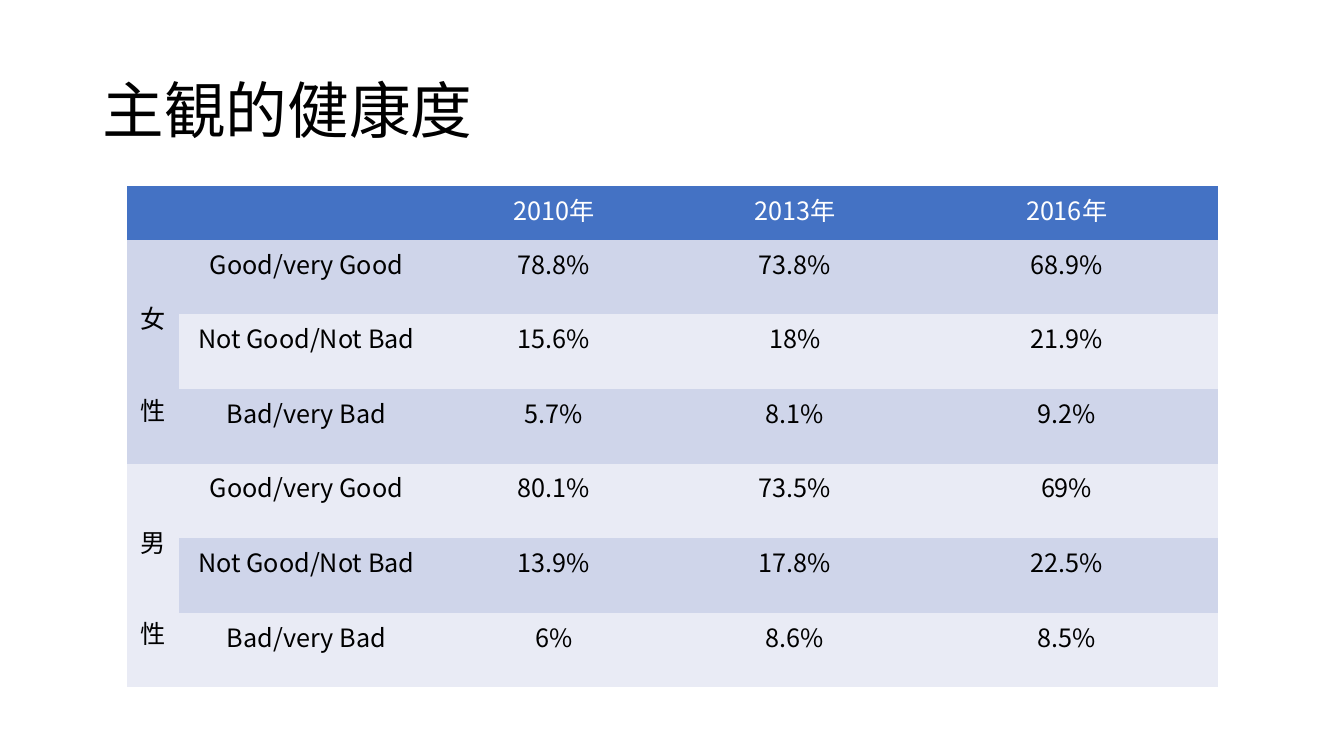
from lxml import etree
from pptx import Presentation
from pptx.dml.color import RGBColor
from pptx.enum.text import MSO_ANCHOR, PP_ALIGN
from pptx.oxml.ns import qn
from pptx.util import Inches, Pt

TITLE = "主観的健康度"
YEARS = ["2010年", "2013年", "2016年"]
GROUPS = [
    ("女性", [
        ("Good/very Good", "78.8%", "73.8%", "68.9%"),
        ("Not Good/Not Bad", "15.6%", "18%", "21.9%"),
        ("Bad/very Bad", "5.7%", "8.1%", "9.2%"),
    ]),
    ("男性", [
        ("Good/very Good", "80.1%", "73.5%", "69%"),
        ("Not Good/Not Bad", "13.9%", "17.8%", "22.5%"),
        ("Bad/very Bad", "6%", "8.6%", "8.5%"),
    ]),
]
COL_WIDTHS = [0.52, 2.52, 2.39, 2.39, 3]
HEADER_H, ROW_H = 0.53, 0.74

FONT = "Noto Sans CJK JP"
NO_STYLE = "{2D5ABB26-0587-4C30-8999-92F81FD0307C}"
BLACK = RGBColor(0x00, 0x00, 0x00)
WHITE = RGBColor(0xFF, 0xFF, 0xFF)
HEADER = RGBColor(0x44, 0x72, 0xC4)
BANDS = [RGBColor(0xCF, 0xD5, 0xEA), RGBColor(0xE9, 0xEB, 0xF5)]
LEFT, CENTER = PP_ALIGN.LEFT, PP_ALIGN.CENTER
MIDDLE = MSO_ANCHOR.MIDDLE


def write(tf, text, size=18, color=BLACK, align=CENTER, spacing=None):
    p = tf.paragraphs[0]
    p.alignment = align
    p.line_spacing = spacing
    r = p.add_run()
    r.text = text
    r.font.size = Pt(size)
    r.font.name = FONT
    r.font.color.rgb = color
    etree.SubElement(r.font._element, qn("a:ea"), typeface=FONT)


def paint(cell, color):
    cell.fill.solid()
    cell.fill.fore_color.rgb = color


prs = Presentation()
prs.slide_width, prs.slide_height = Inches(13.33), Inches(7.5)
s = prs.slides.add_slide(prs.slide_layouts[6])

title = s.shapes.add_textbox(Inches(0.92), Inches(0.4), Inches(11.5), Inches(1.45))
tf = title.text_frame
tf.word_wrap = True
tf.vertical_anchor = MIDDLE
write(tf, TITLE, size=44, align=LEFT, spacing=0.9)

rows = [row for _, group in GROUPS for row in group]
frame = s.shapes.add_table(
    len(rows) + 1, len(COL_WIDTHS), Inches(1.26), Inches(1.85),
    Inches(sum(COL_WIDTHS)), Inches(HEADER_H + ROW_H * len(rows)))
table = frame.table
table.first_row = table.horz_banding = False
table._tbl.tblPr.find(qn("a:tableStyleId")).text = NO_STYLE
for col, width in zip(table.columns, COL_WIDTHS):
    col.width = Inches(width)
for i, row in enumerate(table.rows):
    row.height = Inches(ROW_H if i else HEADER_H)
    for cell in row.cells:
        paint(cell, BANDS[(i - 1) % 2] if i else HEADER)

for c, year in enumerate(YEARS, 2):
    write(table.cell(0, c).text_frame, year, color=WHITE)
for i, row in enumerate(rows, 1):
    for c, text in enumerate(row, 1):
        write(table.cell(i, c).text_frame, text)

top = 1
for name, group in GROUPS:
    cell = table.cell(top, 0)
    cell.merge(table.cell(top + len(group) - 1, 0))
    write(cell.text_frame, name, spacing=2.5)
    top += len(group)

prs.save("out.pptx")
